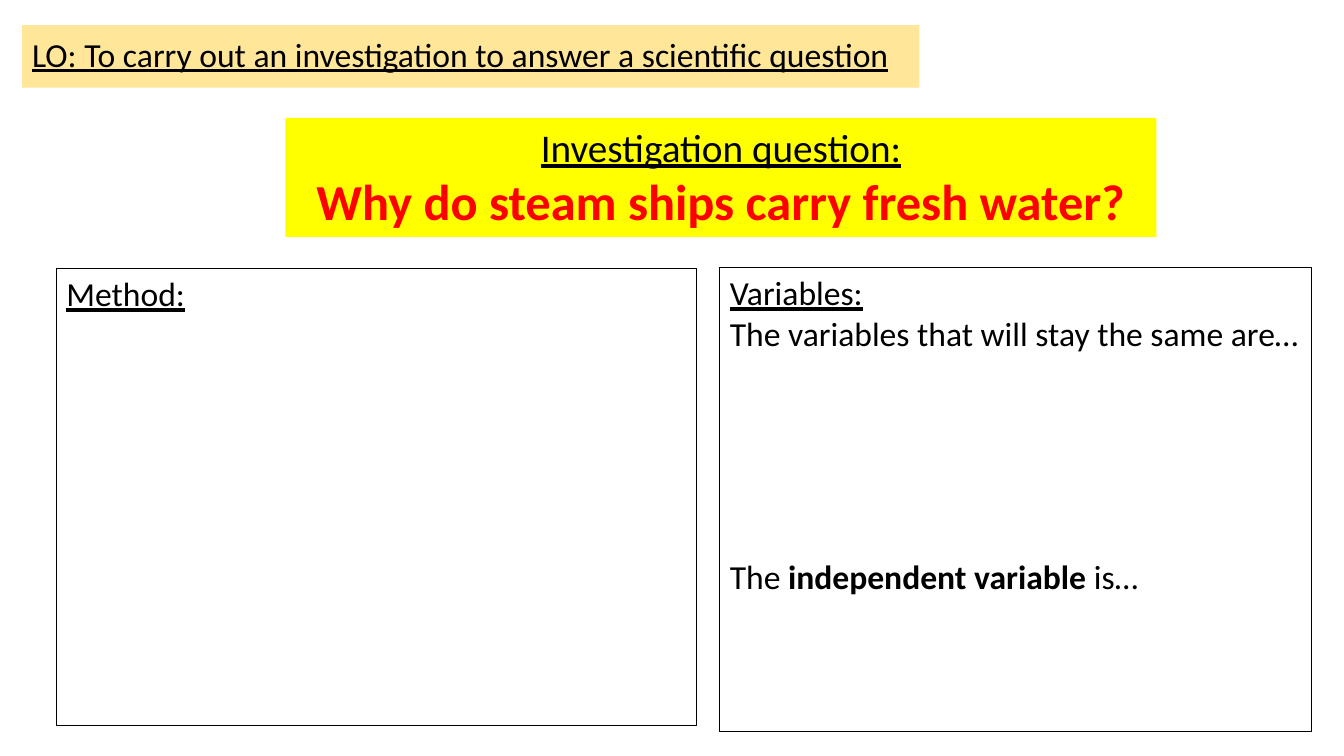
from pptx import Presentation
from pptx.dml.color import RGBColor
from pptx.enum.shapes import MSO_SHAPE as SHAPE
from pptx.enum.text import MSO_ANCHOR as ANCHOR, PP_ALIGN as ALIGN
from pptx.util import Inches, Pt

BLACK = RGBColor(0x00, 0x00, 0x00)
WHITE = RGBColor(0xFF, 0xFF, 0xFF)
RED = RGBColor(0xFF, 0x00, 0x00)
YELLOW = RGBColor(0xFF, 0xFF, 0x00)
CREAM = RGBColor(0xFF, 0xE6, 0x99)
FONT = "Calibri"


def add_panel(slide, box, fill, outlined=False, anchor=ANCHOR.TOP):
    """Draw a filled rectangle and return its text frame."""
    sp = slide.shapes.add_shape(SHAPE.RECTANGLE, *map(Inches, box))
    sp.shadow.inherit = False
    sp.fill.solid()
    sp.fill.fore_color.rgb = fill
    if outlined:
        sp.line.color.rgb = BLACK
        sp.line.width = Pt(0.75)
    else:
        sp.line.fill.background()
    tf = sp.text_frame
    tf.word_wrap = True
    tf.vertical_anchor = anchor
    return tf


def add_run(p, text, size=24, color=BLACK, bold=False, underline=False):
    """Append a formatted run to a paragraph."""
    r = p.add_run()
    r.text = text
    r.font.name = FONT
    r.font.size = Pt(size)
    r.font.color.rgb = color
    r.font.bold = bold
    r.font.underline = underline


def add_heading(tf, text, size=24, align=ALIGN.LEFT):
    """Write the underlined first paragraph of a panel."""
    p = tf.paragraphs[0]
    p.alignment = align
    add_run(p, text, size, underline=True)
    return p


def add_objective(slide, box):
    """Place the learning objective strip."""
    tf = add_panel(slide, box, CREAM, anchor=ANCHOR.MIDDLE)
    p = add_heading(tf, "LO: To carry out an investigation to answer a scientific question")
    p.line_spacing = 0.9


def add_question(slide, box):
    """Place the investigation question banner."""
    tf = add_panel(slide, box, YELLOW)
    add_heading(tf, "Investigation question:", 28, ALIGN.CENTER)
    p = tf.add_paragraph()
    p.alignment = ALIGN.CENTER
    add_run(p, "Why do steam ships carry fresh water?", 36, RED, bold=True)


def add_method(slide, box):
    """Place the method box."""
    add_heading(add_panel(slide, box, WHITE, outlined=True), "Method:")


def add_variables(slide, box):
    """Place the variables box with writing room between its prompts."""
    tf = add_panel(slide, box, WHITE, outlined=True)
    add_heading(tf, "Variables:")
    p = tf.add_paragraph()
    p.alignment = ALIGN.LEFT
    add_run(p, "The variables that will stay the same are…")
    p = tf.add_paragraph()
    p.alignment = ALIGN.LEFT
    p.space_before = Pt(145)
    add_run(p, "The ")
    add_run(p, "independent variable ", bold=True)
    add_run(p, "is…")


def main():
    """Build the investigation slide and save it."""
    prs = Presentation()
    prs.slide_width, prs.slide_height = Inches(13.33), Inches(7.5)
    s = prs.slides.add_slide(prs.slide_layouts[6])
    add_objective(s, (0.22, 0.25, 8.9, 0.62))
    add_question(s, (2.83, 1.17, 8.64, 1.18))
    add_method(s, (0.56, 2.66, 6.35, 4.54))
    add_variables(s, (7.14, 2.65, 5.87, 4.61))
    prs.save("out.pptx")


if __name__ == "__main__":
    main()
